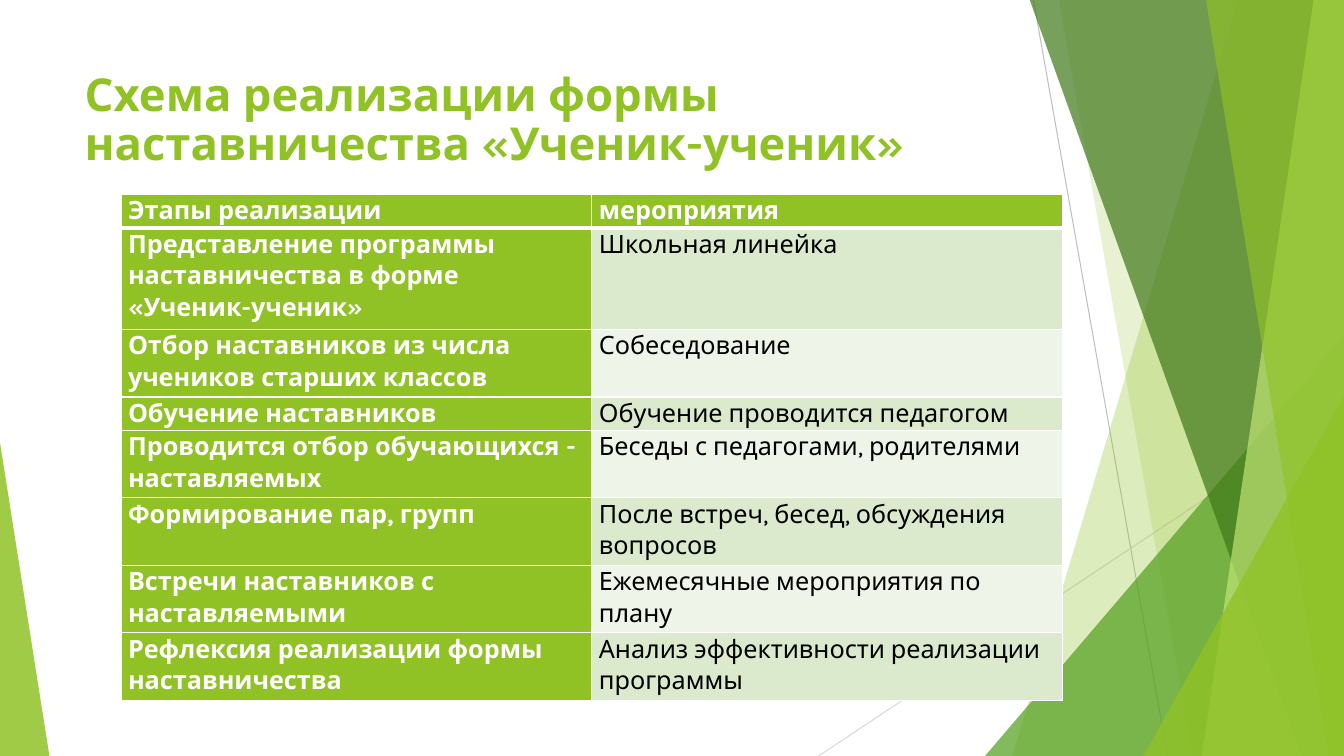
from lxml import etree
from pptx import Presentation
from pptx import util as u
from pptx.dml import color
from pptx.enum import shapes, text
from pptx.oxml import ns

COLORS = {"lime": "90C226", "green": "54A021", "dark": "3F7819", "pale": "C0E474",
          "grey": "BFBFBF", "silver": "D9D9D9", "white": "FFFFFF", "black": "000000",
          "band": "DBE9CD", "light": "EEF4E8"}
FONT = "Karla"
WIDTH, HEIGHT = 13.33, 7.5
STAGES = [
    ("Этапы реализации", "мероприятия", 0.33),
    ("Представление программы наставничества в форме «Ученик-ученик»",
     "Школьная линейка", 1.01),
    ("Отбор наставников из числа учеников старших классов", "Собеседование", 0.67),
    ("Обучение наставников", "Обучение проводится педагогом", 0.33),
    ("Проводится отбор обучающихся - наставляемых",
     "Беседы с педагогами, родителями", 0.67),
    ("Формирование пар, групп", "После встреч, бесед, обсуждения вопросов", 0.67),
    ("Встречи наставников с наставляемыми", "Ежемесячные мероприятия по плану", 0.67),
    ("Рефлексия реализации формы наставничества",
     "Анализ эффективности реализации программы", 0.67),
]


def rgb(name):
    """Return the named palette colour."""
    return color.RGBColor.from_string(COLORS[name])


def paint(shape, name, opacity):
    """Give a shape a translucent fill without outline or shadow."""
    shape.shadow.inherit = False
    shape.line.fill.background()
    shape.fill.solid()
    shape.fill.fore_color.rgb = rgb(name)
    tint = shape.fill._xPr.find(".//" + ns.qn("a:srgbClr"))
    etree.SubElement(tint, ns.qn("a:alpha"), val=str(opacity * 1000))


def add_ray(page, start, end, name):
    """Draw one thin decorative line."""
    ray = page.shapes.add_connector(shapes.MSO_CONNECTOR.STRAIGHT,
                                    *map(u.Inches, start + end))
    ray.line.color.rgb = rgb(name)
    ray.line.width = u.Pt(0.75)
    etree.SubElement(ray.element.spPr, ns.qn("a:effectLst"))


def add_facet(page, box, upper, lower, name, opacity):
    """Draw a panel from a slanted left edge to the right side of the box."""
    left, top, width, height = box
    right, bottom = left + width, top + height
    corners = [(upper, top), (right, top), (right, bottom), (lower, bottom)]
    points = [(u.Inches(x), u.Inches(y)) for x, y in corners]
    builder = page.shapes.build_freeform(*points[0], scale=1.0)
    builder.add_line_segments(points[1:], close=True)
    paint(builder.convert_to_shape(), name, opacity)


def add_corner(page, box, apex, name, opacity):
    """Draw a right triangle with its apex at the given fraction."""
    corner = page.shapes.add_shape(shapes.MSO_SHAPE.ISOSCELES_TRIANGLE,
                                   *map(u.Inches, box))
    corner.adjustments[0] = apex
    paint(corner, name, opacity)


def add_decoration(page, box):
    """Layer the lines, panels and triangles at the edges of the box."""
    left, top, width, height = box
    right, bottom = left + width, top + height
    panels = (left, top - 0.01, width, height + 0.01)
    add_ray(page, (10.25, top), (11.58, bottom), "grey")
    add_ray(page, (right, 4.03), (8.12, bottom), "silver")
    add_facet(page, panels, 12.28, 10.04, "lime", 30)
    add_facet(page, panels, 10.5, 11.83, "lime", 20)
    add_corner(page, (right - 3.56, bottom - 4.17, 3.56, 4.17), 1, "green", 72)
    add_facet(page, panels, 10.21, 12.91, "dark", 70)
    add_facet(page, panels, 13.03, 11.92, "pale", 70)
    add_facet(page, panels, 11.96, 13.18, "lime", 65)
    add_corner(page, (right - 1.99, bottom - 3.57, 1.99, 3.57), 1, "lime", 80)
    add_corner(page, (left, bottom - 3.11, 0.49, 3.11), 0, "lime", 85)


def style_para(para, size, name, bold, spacing):
    """Format a left-aligned paragraph."""
    para.alignment = text.PP_ALIGN.LEFT
    para.line_spacing = spacing
    para.font.name = FONT
    para.font.size = u.Pt(size)
    para.font.bold = bold
    para.font.color.rgb = rgb(name)


def add_title(page, box):
    """Fill the title placeholder and bring it in front of the decoration."""
    title = page.shapes.title
    title.left, title.top, title.width, title.height = map(u.Inches, box)
    frame = title.text_frame
    frame.text = "Схема реализации формы наставничества «Ученик-ученик»"
    frame.word_wrap = True
    frame.auto_size = text.MSO_AUTO_SIZE.NONE
    frame.vertical_anchor = text.MSO_ANCHOR.TOP
    style_para(frame.paragraphs[0], 32.4, "lime", True, 0.9)
    page.shapes.element.append(title.element)


def add_borders(cell, widths):
    """Outline a cell in white with a width in points for each side."""
    props = cell._tc.get_or_add_tcPr()
    for index, (side, width) in enumerate(widths.items()):
        edge = etree.Element(ns.qn("a:ln" + side), w=str(u.Pt(width)))
        fill = etree.SubElement(edge, ns.qn("a:solidFill"))
        etree.SubElement(fill, ns.qn("a:srgbClr"), val=COLORS["white"])
        props.insert(index, edge)


def add_stages(page, box):
    """Build the table of stages and activities."""
    table = page.shapes.add_table(len(STAGES), 2, *map(u.Inches, box)).table
    for column in table.columns:
        column.width = u.Inches(box[2] / 2)
    for r, (stage, activity, height) in enumerate(STAGES):
        table.rows[r].height = u.Inches(height)
        for c, words in enumerate((stage, activity)):
            cell = table.cell(r, c)
            strong = r == 0 or c == 0
            cell.text = words
            cell.margin_left = cell.margin_right = u.Inches(0.07)
            cell.margin_top = cell.margin_bottom = 0
            cell.fill.solid()
            cell.fill.fore_color.rgb = rgb(
                "lime" if strong else "band" if r % 2 else "light")
            style_para(cell.text_frame.paragraphs[0], 18,
                       "white" if strong else "black", strong, 1.07)
            add_borders(cell, {"L": 1, "R": 1, "T": 3 if r == 1 else 1,
                               "B": 3 if r == 0 else 1})


def main():
    """Create and save the deck."""
    deck = Presentation()
    deck.slide_width, deck.slide_height = u.Inches(WIDTH), u.Inches(HEIGHT)
    page = deck.slides.add_slide(deck.slide_layouts.get_by_name("Title Only"))
    add_decoration(page, (0, 0, WIDTH, HEIGHT))
    add_title(page, (0.74, 0.67, 9.4, 1.44))
    add_stages(page, (1.2, 1.93, 9.34, 5.01))
    deck.save("out.pptx")


if __name__ == "__main__":
    main()
